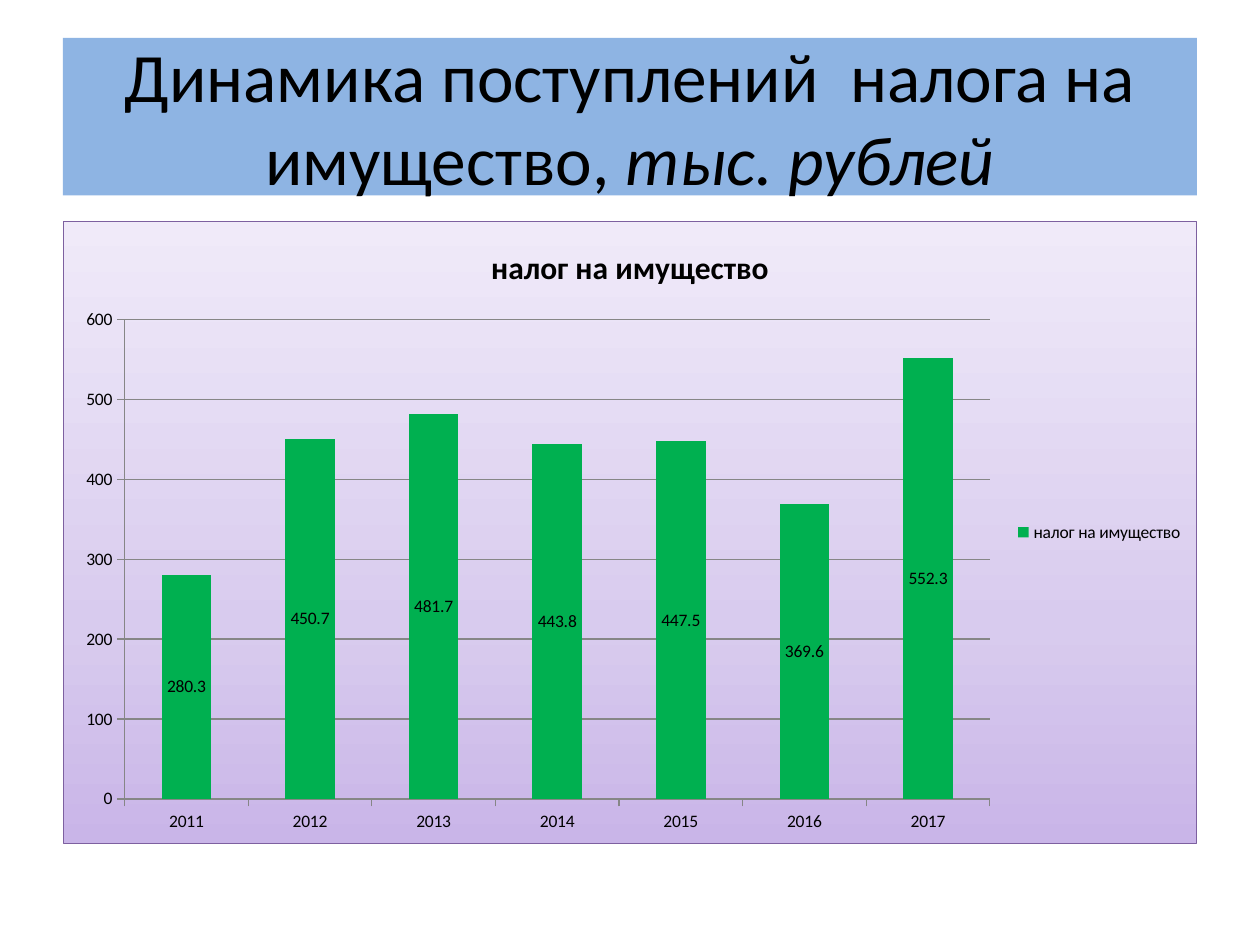
from lxml.etree import SubElement
from pptx import Presentation
from pptx.chart.data import CategoryChartData
from pptx.dml.color import RGBColor
from pptx.enum.chart import XL_CHART_TYPE, XL_LABEL_POSITION, XL_LEGEND_POSITION, XL_TICK_MARK
from pptx.enum.text import MSO_ANCHOR, PP_ALIGN
from pptx.oxml import parse_xml
from pptx.oxml.ns import nsdecls, qn
from pptx.util import Inches, Pt

FONT = "Calibri"
TAX = "налог на имущество"
RECEIPTS = {"2011": 280.3, "2012": 450.7, "2013": 481.7, "2014": 443.8,
            "2015": 447.5, "2016": 369.6, "2017": 552.3}
GRADIENT = [(0, "C9B5E8"), (35, "D8CBEE"), (100, "F0EAF9")]


def rgb(color):
    return RGBColor.from_string(color)


def set_font(font, size, bold=False, italic=False):
    font.name = FONT
    font.size = Pt(size)
    font.bold = bold
    font.italic = italic
    font.color.rgb = rgb("000000")


def add_title(slide, left, top, width, height):
    sp = slide.shapes.add_textbox(left, top, width, height)
    sp.fill.solid()
    sp.fill.fore_color.rgb = rgb("8EB4E3")
    tf = sp.text_frame
    tf.word_wrap = True
    tf.vertical_anchor = MSO_ANCHOR.MIDDLE
    p = tf.paragraphs[0]
    p.alignment = PP_ALIGN.CENTER
    for text, italic in (("Динамика поступлений  налога на имущество, ", False),
                         ("тыс. рублей", True)):
        r = p.add_run()
        r.text = text
        set_font(r.font, 39.6, italic=italic)


def set_chart_background(chart, stops, border):
    """Fill the chart area with an upward gradient and outline it."""
    sp_pr = parse_xml(f'<c:spPr {nsdecls("c", "a")}/>')
    grad = SubElement(sp_pr, qn("a:gradFill"), rotWithShape="1")
    stop_list = SubElement(grad, qn("a:gsLst"))
    for percent, color in stops:
        stop = SubElement(stop_list, qn("a:gs"), pos=str(percent * 1000))
        SubElement(stop, qn("a:srgbClr"), val=color)
    SubElement(grad, qn("a:lin"), ang=str(270 * 60000), scaled="1")
    line = SubElement(sp_pr, qn("a:ln"), w=str(Pt(0.75)))
    SubElement(SubElement(line, qn("a:solidFill")), qn("a:srgbClr"), val=border)
    chart.element.find(qn("c:chart")).addnext(sp_pr)


def add_receipts_chart(slide, left, top, width, height):
    data = CategoryChartData()
    data.categories = list(RECEIPTS)
    data.add_series(TAX, list(RECEIPTS.values()))
    chart = slide.shapes.add_chart(XL_CHART_TYPE.COLUMN_STACKED,
                                   left, top, width, height, data).chart
    set_font(chart.font, 10)
    set_chart_background(chart, GRADIENT, "7D60A0")

    chart.has_title = True
    r = chart.chart_title.text_frame.paragraphs[0].add_run()
    r.text = TAX
    set_font(r.font, 18, bold=True)
    chart.chart_title.include_in_layout = False

    chart.has_legend = True
    chart.legend.position = XL_LEGEND_POSITION.RIGHT
    chart.legend.include_in_layout = False

    for axis in (chart.category_axis, chart.value_axis):
        axis.major_tick_mark = XL_TICK_MARK.OUTSIDE
        axis.format.line.color.rgb = rgb("868686")
        axis.format.line.width = Pt(0.75)
    gridlines = chart.value_axis.major_gridlines.format.line
    gridlines.color.rgb = rgb("868686")
    gridlines.width = Pt(0.75)

    plot = chart.plots[0]
    plot.vary_by_categories = False
    plot.gap_width = 150
    plot.overlap = 100
    series = plot.series[0]
    series.format.fill.solid()
    series.format.fill.fore_color.rgb = rgb("00B050")
    labels = series.data_labels
    labels.show_value = True
    labels.position = XL_LABEL_POSITION.CENTER
    set_font(labels.font, 10)


def main():
    prs = Presentation()
    prs.slide_width, prs.slide_height = Inches(10), Inches(7.5)
    slide = prs.slides.add_slide(prs.slide_layouts[6])
    left, width = Inches(0.5), Inches(9)
    add_title(slide, left, Inches(0.3), width, Inches(1.25))
    add_receipts_chart(slide, left, Inches(1.75), width, Inches(4.95))
    prs.save("out.pptx")


if __name__ == "__main__":
    main()
